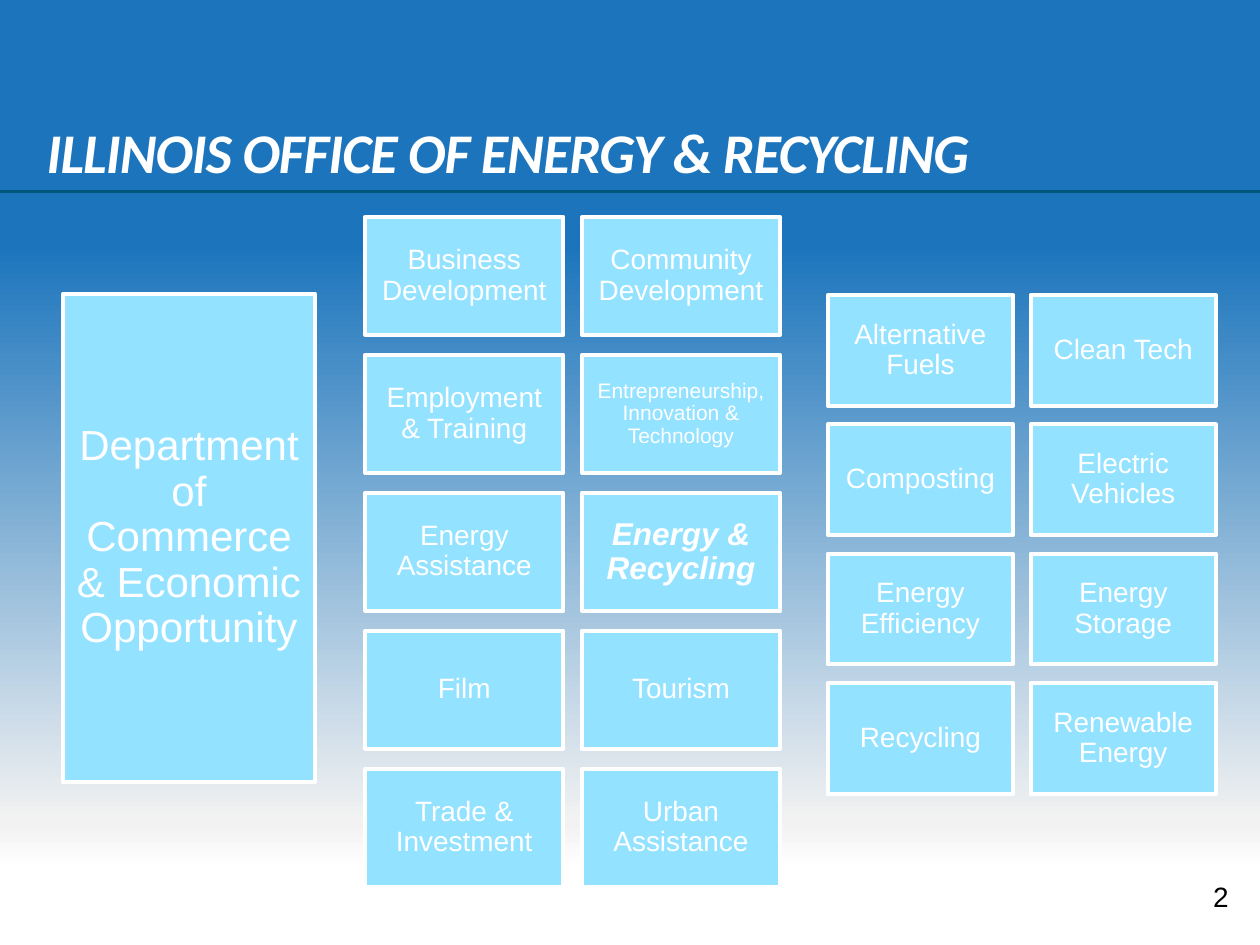
from lxml import etree
from pptx import Presentation
from pptx.dml.color import RGBColor
from pptx.enum.shapes import MSO_CONNECTOR, MSO_SHAPE
from pptx.enum.text import MSO_ANCHOR, PP_ALIGN
from pptx.oxml.ns import qn
from pptx.util import Inches, Pt

RECTANGLE = MSO_SHAPE.RECTANGLE
STRAIGHT = MSO_CONNECTOR.STRAIGHT
MIDDLE, BOTTOM = MSO_ANCHOR.MIDDLE, MSO_ANCHOR.BOTTOM
LEFT, CENTER, RIGHT = PP_ALIGN.LEFT, PP_ALIGN.CENTER, PP_ALIGN.RIGHT

WHITE = RGBColor(0xFF, 0xFF, 0xFF)
BLACK = RGBColor(0x00, 0x00, 0x00)
PALE_GREY = RGBColor(0xF2, 0xF2, 0xF2)
BLUE = RGBColor(0x1C, 0x75, 0xBC)
SKY = RGBColor(0x93, 0xE2, 0xFF)
TEAL = RGBColor(0x00, 0x58, 0x78)

BACKGROUND_STOPS = [(8, WHITE), (13, PALE_GREY), (74, BLUE), (84, BLUE)]
DIVISIONS = [
    ["Business Development", "Community Development"],
    ["Employment & Training", "Entrepreneurship, Innovation & Technology"],
    ["Energy Assistance", "Energy & Recycling"],
    ["Film", "Tourism"],
    ["Trade & Investment", "Urban Assistance"],
]
PROGRAMS = [
    ["Alternative Fuels", "Clean Tech"],
    ["Composting", "Electric Vehicles"],
    ["Energy Efficiency", "Energy Storage"],
    ["Recycling", "Renewable Energy"],
]
SMALL_LABEL = "Entrepreneurship, Innovation & Technology"
KEY_LABEL = "Energy & Recycling"


def paint_background(slide):
    """Fill the slide with a gradient running from the bottom to the top."""
    fill = slide.background.fill
    fill.gradient()
    fill.gradient_angle = 90
    stops = slide.element.find(".//" + qn("a:gsLst"))
    stops.clear()
    for percent, color in BACKGROUND_STOPS:
        stop = etree.SubElement(stops, qn("a:gs"), pos=str(percent * 1000))
        etree.SubElement(stop, qn("a:srgbClr"), val=str(color))


def write_text(shape, text, size, color, alignment, anchor=MIDDLE, font="Arial"):
    """Write one formatted paragraph in a shape and return it."""
    frame = shape.text_frame
    frame.word_wrap = True
    frame.vertical_anchor = anchor
    paragraph = frame.paragraphs[0]
    paragraph.text = text
    paragraph.alignment = alignment
    paragraph.font.name = font
    paragraph.font.size = Pt(size)
    paragraph.font.color.rgb = color
    return paragraph


def add_title(slide, text):
    """Place the slide title in its placeholder."""
    title = slide.shapes.title
    title.left, title.top = Inches(0.27), Inches(0.17)
    title.width, title.height = Inches(9.23), Inches(1.35)
    paragraph = write_text(title, text, 32, WHITE, LEFT, BOTTOM, "Calibri")
    paragraph.font.bold = True
    paragraph.font.italic = True
    paragraph.runs[0].font._element.set("spc", "-60")


def add_rule(slide):
    """Draw the line under the title."""
    top = Inches(1.52)
    rule = slide.shapes.add_connector(STRAIGHT, Inches(10), top, 0, top)
    rule.line.color.rgb = TEAL
    rule.line.width = Pt(2.25)
    etree.SubElement(rule._element.spPr, qn("a:effectLst"))


def add_box(slide, text, left, top, width, height, size=16, inset=0.07):
    """Add a labelled box and return its paragraph."""
    box = slide.shapes.add_shape(
        RECTANGLE, Inches(left), Inches(top), Inches(width), Inches(height))
    box.shadow.inherit = False
    box.fill.solid()
    box.fill.fore_color.rgb = SKY
    box.line.color.rgb = WHITE
    box.line.width = Pt(2.25)
    frame = box.text_frame
    frame.margin_left = frame.margin_right = Inches(inset)
    frame.margin_top = frame.margin_bottom = Inches(inset)
    paragraph = write_text(box, text, size, WHITE, CENTER)
    paragraph.line_spacing = 0.9
    return paragraph


def add_grid(slide, rows, left, top, right, bottom, width, height):
    """Spread rows of boxes evenly over an area."""
    column_step = (right - left - width) / (len(rows[0]) - 1)
    row_step = (bottom - top - height) / (len(rows) - 1)
    for row, labels in enumerate(rows):
        for column, label in enumerate(labels):
            place = (left + column * column_step, top + row * row_step, width, height)
            if label == SMALL_LABEL:
                add_box(slide, label, *place, size=12, inset=0.05)
            elif label == KEY_LABEL:
                paragraph = add_box(slide, label, *place, size=18)
                paragraph.font.bold = True
                paragraph.font.italic = True
            else:
                add_box(slide, label, *place)


def add_page_number(slide, text):
    """Add the page number at the bottom right."""
    box = slide.shapes.add_textbox(
        Inches(8.81), Inches(6.96), Inches(1.04), Inches(0.31))
    write_text(box, text, 16, BLACK, RIGHT)


def main():
    """Build and save the slide."""
    presentation = Presentation()
    presentation.slide_width = Inches(10)
    presentation.slide_height = Inches(7.5)
    slide = presentation.slides.add_slide(presentation.slide_layouts[5])
    paint_background(slide)
    add_rule(slide)
    add_title(slide, "ILLINOIS OFFICE OF ENERGY & RECYCLING")
    add_box(slide, "Department of Commerce & Economic Opportunity",
            0.5, 2.33, 2, 3.88, size=24, inset=0.1)
    add_grid(slide, DIVISIONS, 2.9, 1.72, 6.19, 7.04, 1.57, 0.94)
    add_grid(slide, PROGRAMS, 6.57, 2.34, 9.65, 6.3, 1.47, 0.88)
    add_page_number(slide, "2")
    presentation.save("out.pptx")


if __name__ == "__main__":
    main()
